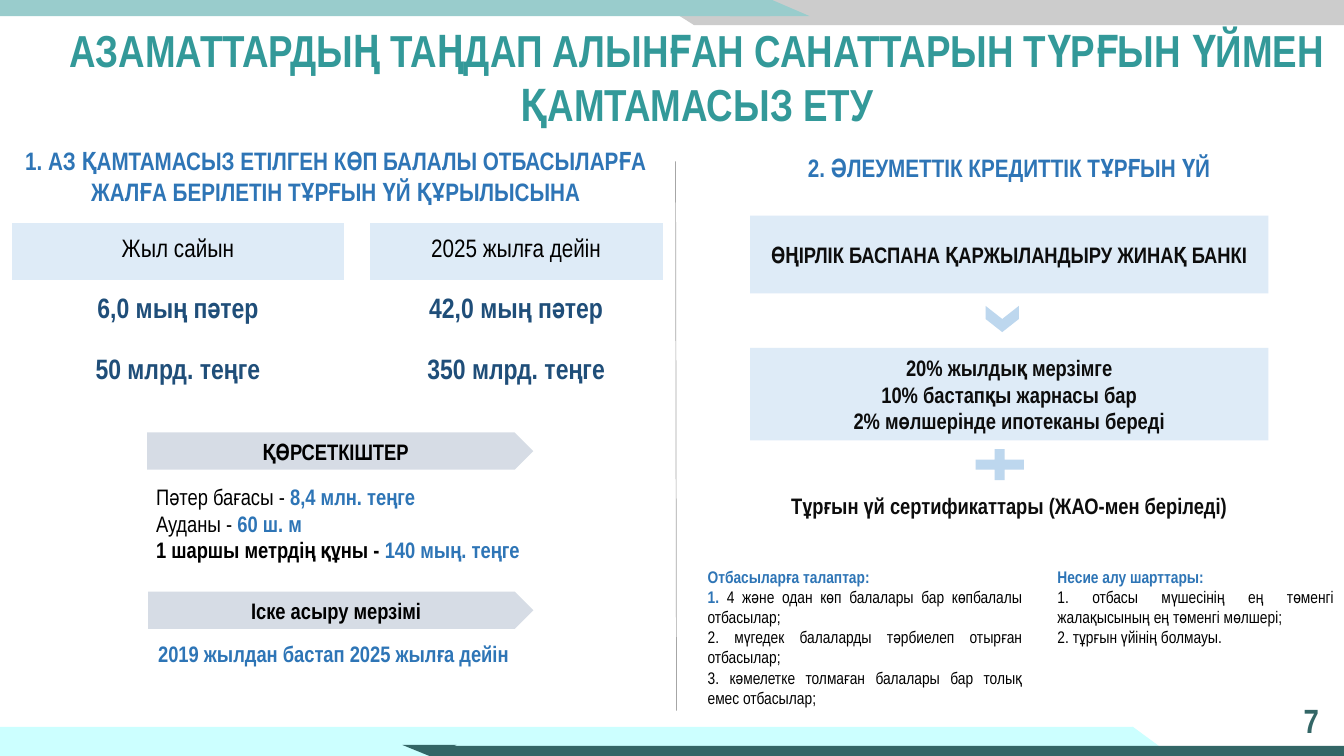
from dataclasses import dataclass

from lxml.etree import SubElement
from pptx import Presentation
from pptx.dml.color import RGBColor
from pptx.enum.shapes import MSO_CONNECTOR, MSO_SHAPE as Preset
from pptx.enum.text import MSO_ANCHOR as Anchor, MSO_AUTO_SIZE, PP_ALIGN as Align
from pptx.oxml.ns import qn
from pptx.util import Inches, Pt

FONT = "Arial Narrow"
BLACK, INK, WHITE = "000000", "0D0D0D", "FFFFFF"
BLUE, NAVY, PALE_BLUE, SKY = "2E75B6", "1F4E79", "DEEBF7", "BDD7EE"
TEAL, DARK_TEAL, MINT, AQUA = "339999", "336666", "99CCCC", "CCFFFF"
SILVER, BLUE_GREY, LINE_GREY = "CCCCCC", "D6DCE5", "A6A6A6"


@dataclass
class Part:
    text: str
    color: str = BLACK
    bold: bool = False


@dataclass
class Box:
    """A place in inches: left, top, width, height."""
    left: float
    top: float
    width: float
    height: float

    def lengths(self) -> list:
        return [Inches(v) for v in (self.left, self.top, self.width, self.height)]


@dataclass
class Panel:
    box: Box
    fill: str
    preset: Preset = Preset.RECTANGLE
    rotation: int = 0
    lines: tuple = ()
    size: int = 16
    color: str = INK


@dataclass
class Note:
    box: Box
    paragraphs: list
    size: int = 16
    align: Align = Align.LEFT
    anchor: Anchor = Anchor.TOP
    spacing: float = 1.0


BANDS = [
    Panel(Box(6.89, 0, 6.45, 0.25), SILVER),
    Panel(Box(6.49, 0, 0.79, 0.25), SILVER, Preset.ISOSCELES_TRIANGLE, 180),
    Panel(Box(0, -0.01, 7.64, 0.17), MINT),
    Panel(Box(7.24, -0.01, 0.79, 0.17), MINT, Preset.ISOSCELES_TRIANGLE),
    Panel(Box(0, 7.21, 11.24, 0.29), AQUA),
    Panel(Box(3.99, 7.39, 0.54, 0.11), DARK_TEAL, Preset.ISOSCELES_TRIANGLE, 180),
    Panel(Box(10.84, 7.21, 0.79, 0.29), AQUA, Preset.ISOSCELES_TRIANGLE),
    Panel(Box(4.26, 7.4, 9.07, 0.1), DARK_TEAL),
]
PANELS = [
    Panel(Box(0.09, 1.4, 6.48, 0.69), WHITE, size=18, color=BLUE, lines=(
        "1. АЗ ҚАМТАМАСЫЗ ЕТІЛГЕН КӨП БАЛАЛЫ ОТБАСЫЛАРҒА "
        "ЖАЛҒА БЕРІЛЕТІН ТҰРҒЫН ҮЙ ҚҰРЫЛЫСЫНА",)),
    Panel(Box(6.84, 1.32, 6.34, 0.69), WHITE, size=18, color=BLUE,
          lines=("2. ӘЛЕУМЕТТІК КРЕДИТТІК ТҰРҒЫН ҮЙ",)),
    Panel(Box(1.46, 4.29, 3.83, 0.37), BLUE_GREY, Preset.PENTAGON,
          lines=("ҚӨРСЕТКІШТЕР",), color=BLACK),
    Panel(Box(1.47, 5.87, 3.82, 0.37), BLUE_GREY, Preset.PENTAGON,
          lines=("Іске асыру мерзімі",), color=BLACK),
    Panel(Box(7.44, 2.14, 5.14, 0.77), PALE_BLUE,
          lines=("ӨҢІРЛІК БАСПАНА ҚАРЖЫЛАНДЫРУ ЖИНАҚ БАНКІ",)),
    Panel(Box(9.81, 3, 0.26, 0.33), SKY, Preset.CHEVRON, 90),
    Panel(Box(7.44, 3.45, 5.14, 0.92), PALE_BLUE, lines=(
        "20% жылдық мерзімге", "10% бастапқы жарнасы бар",
        "2% мөлшерінде ипотеканы береді")),
    Panel(Box(9.59, 4.4, 0.65, 0.42), SKY, Preset.MATH_PLUS),
]
NOTES = [
    Note(Box(12.67, 6.95, 0.67, 0.44), [[Part("7", DARK_TEAL, True)]], 24,
         Align.CENTER, Anchor.MIDDLE, 0.9),
    Note(Box(1.47, 6.3, 3.82, 0.37),
         [[Part("2019 жылдан бастап 2025 жылға дейін", BLUE, True)]], align=Align.JUSTIFY),
    Note(Box(1.45, 4.74, 3.9, 0.91), [
        [Part("Пәтер бағасы - "), Part("8,4 млн. теңге", BLUE, True)],
        [Part("Ауданы - "), Part("60 ш. м", BLUE, True)],
        [Part("1 шаршы метрдің құны - ", bold=True), Part("140 мың. теңге", BLUE, True)],
    ]),
    Note(Box(7.44, 4.87, 5.14, 0.3),
         [[Part("Тұрғын үй сертификаттары (ЖАО-мен беріледі)", INK, True)]],
         align=Align.CENTER, anchor=Anchor.MIDDLE),
    Note(Box(6.92, 5.57, 3.32, 1.59), [
        [Part("Отбасыларға талаптар:", BLUE, True)],
        [Part("1. ", BLUE, True), Part("4 және одан көп балалары бар көпбалалы отбасылар;")],
        [Part("2. мүгедек балаларды тәрбиелеп отырған отбасылар;")],
        [Part("3. кәмелетке толмаған балалары бар толық емес отбасылар;")],
    ], 12, Align.JUSTIFY),
    Note(Box(10.39, 5.57, 2.94, 1.25), [
        [Part("Несие алу шарттары:", BLUE, True)],
        [Part("1. отбасы мүшесінің ең төменгі жалақысының ең төменгі мөлшері;")],
        [Part("2. тұрғын үйінің болмауы.")],
    ], 12, Align.JUSTIFY),
]
HOUSING_ROWS = [
    ("Жыл сайын", "", "2025 жылға дейін"),
    ("6,0 мың пәтер", "", "42,0 мың пәтер"),
    ("50 млрд. теңге", "", "350 млрд. теңге"),
]


def paint(target, color: str) -> None:
    """Give a fill one solid colour."""
    target.solid()
    target.fore_color.rgb = RGBColor.from_string(color)


def write(frame, paragraphs: list, size: int, align: Align, spacing: float = 1.0) -> None:
    for index, parts in enumerate(paragraphs):
        paragraph = frame.add_paragraph() if index else frame.paragraphs[0]
        paragraph.alignment = align
        paragraph.line_spacing = spacing
        for part in parts:
            run = paragraph.add_run()
            run.text = part.text
            run.font.name, run.font.size, run.font.bold = FONT, Pt(size), part.bold
            paint(run.font.fill, part.color)


def add_title(slide) -> None:
    title = slide.shapes.title
    title.left, title.top, title.width, title.height = Box(0, 0.28, 13.33, 0.96).lengths()
    frame = title.text_frame
    frame.auto_size = MSO_AUTO_SIZE.NONE
    frame.vertical_anchor = Anchor.MIDDLE
    text = "АЗАМАТТАРДЫҢ ТАҢДАП АЛЫНҒАН САНАТТАРЫН ТҮРҒЫН ҮЙМЕН ҚАМТАМАСЫЗ ЕТУ"
    write(frame, [[Part(text, TEAL, True)]], 32, Align.CENTER)
    properties = frame.paragraphs[0]._p.get_or_add_pPr()
    properties.set("marL", str(Inches(0.5)))
    properties.set("indent", "0")


def add_panel(slide, panel: Panel) -> None:
    shape = slide.shapes.add_shape(panel.preset, *panel.box.lengths())
    shape.shadow.inherit = False
    shape.rotation = panel.rotation
    paint(shape.fill, panel.fill)
    shape.line.fill.background()
    shape.text_frame.vertical_anchor = Anchor.MIDDLE
    write(shape.text_frame, [[Part(line, panel.color, True)] for line in panel.lines],
          panel.size, Align.CENTER)


def add_note(slide, note: Note) -> None:
    frame = slide.shapes.add_textbox(*note.box.lengths()).text_frame
    frame.word_wrap = True
    frame.vertical_anchor = note.anchor
    write(frame, note.paragraphs, note.size, note.align, note.spacing)


def add_divider(slide) -> None:
    line = slide.shapes.add_connector(
        MSO_CONNECTOR.STRAIGHT, Inches(6.7), Inches(1.6), Inches(6.71), Inches(7.05))
    paint(line.line.fill, LINE_GREY)
    line.line.width = Pt(0.5)
    SubElement(line._element.spPr, qn("a:effectLst"))


def add_housing_table(slide) -> None:
    table = slide.shapes.add_table(3, 3, *Box(0.11, 2.21, 6.46, 1.78).lengths()).table
    table.first_row = table.horz_banding = False
    for column, width in zip(table.columns, (3.31, 0.23, 2.92)):
        column.width = Inches(width)
    for row, height in zip(table.rows, (0.57, 0.61, 0.61)):
        row.height = Inches(height)
    for row_index, texts in enumerate(HOUSING_ROWS):
        header = row_index == 0
        for column_index, text in enumerate(texts):
            cell = table.cell(row_index, column_index)
            cell.vertical_anchor = Anchor.MIDDLE
            if header and text:
                paint(cell.fill, PALE_BLUE)
            else:
                cell.fill.background()
            if text:
                part = Part(text) if header else Part(text, NAVY, True)
                write(cell.text_frame, [[part]], 18 if header else 20, Align.CENTER)


def main() -> None:
    presentation = Presentation()
    presentation.slide_width, presentation.slide_height = Inches(13.33), Inches(7.5)
    slide = presentation.slides.add_slide(presentation.slide_layouts.get_by_name("Title Only"))
    add_title(slide)
    for panel in BANDS + PANELS:
        add_panel(slide, panel)
    add_divider(slide)
    add_housing_table(slide)
    for note in NOTES:
        add_note(slide, note)
    presentation.save("out.pptx")


if __name__ == "__main__":
    main()
